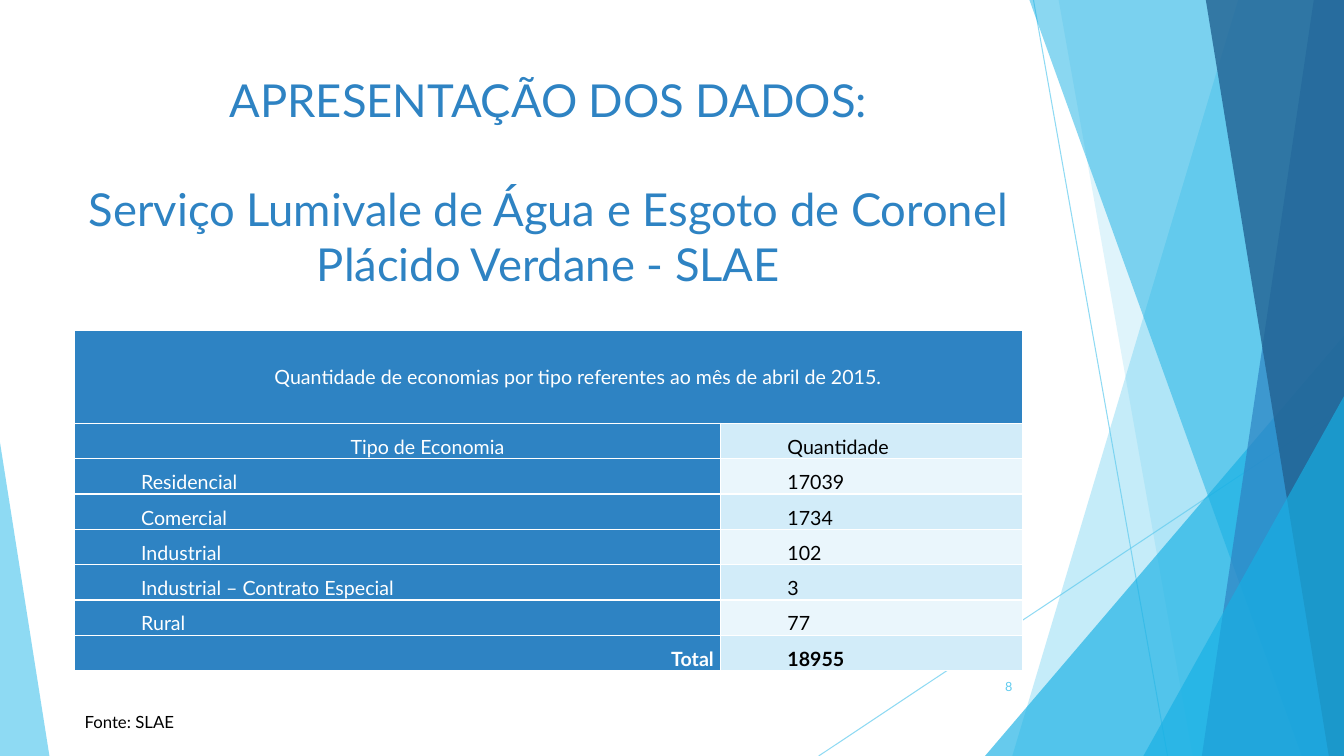
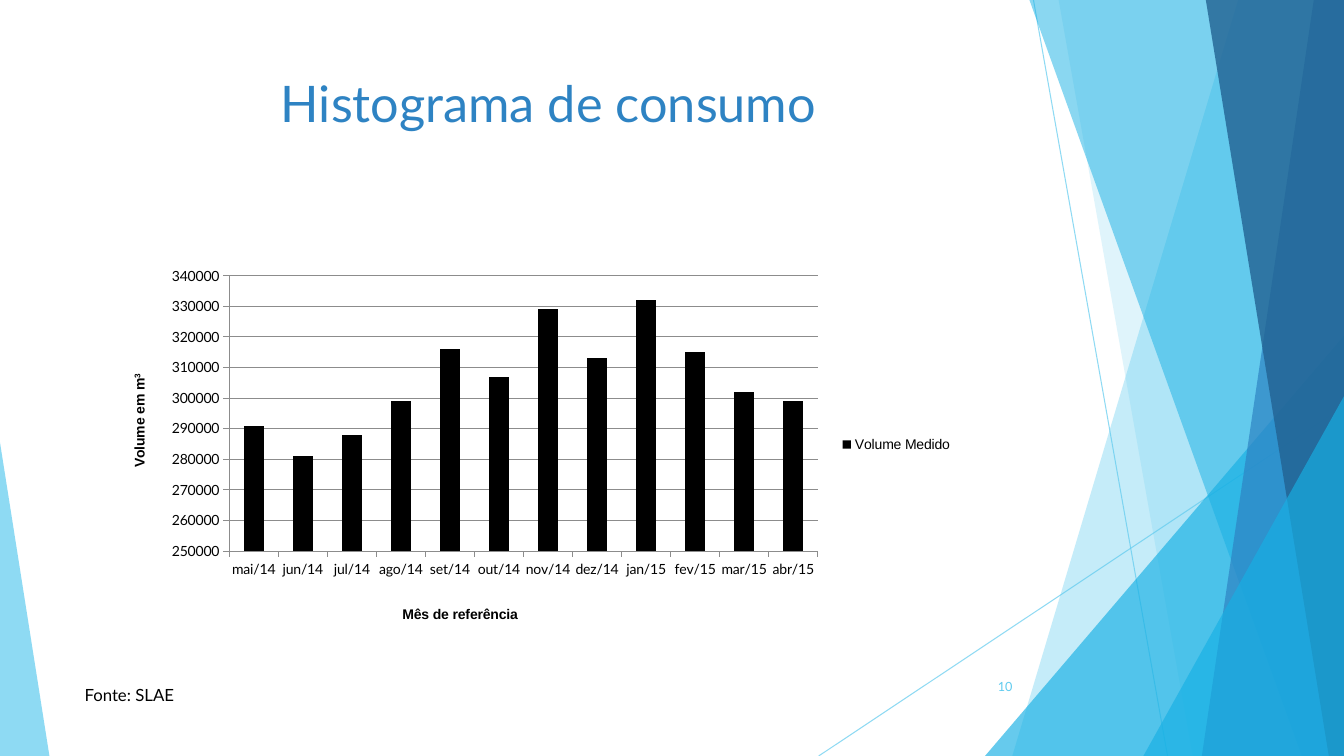
from lxml import etree
from pptx import Presentation
from pptx.chart import data as cd
from pptx.dml.color import RGBColor
from pptx.enum import chart as ch, shapes, text
from pptx.oxml import ns
from pptx.util import Inches, Pt

SKY = RGBColor(0x5F, 0xCB, 0xEF)
CYAN = RGBColor(0x17, 0xB0, 0xE4)
BLUE = RGBColor(0x2E, 0x83, 0xC3)
NAVY = RGBColor(0x22, 0x62, 0x92)
PALE = RGBColor(0xD2, 0xEC, 0xF9)
PALER = RGBColor(0xEA, 0xF6, 0xFC)
GREY = RGBColor(0x8C, 0x8C, 0x8C)
BLACK = RGBColor(0, 0, 0)
WHITE = RGBColor(255, 255, 255)
FONT = "Lato"
W, H = 13.33, 7.5
LEFT, WIDTH = 0.74, 9.4
AL = text.PP_ALIGN

LINES = [(10.25, 0, 11.58, H), (W, 4.03, 8.12, H)]
FACETS = [
    ("band", (12.28, 10.04), SKY, 36),
    ("band", (10.5, 11.83), SKY, 20),
    ("triangle", (9.77, 3.33, 3.56, 1), CYAN, 66),
    ("band", (10.21, 12.91), CYAN, 50),
    ("band", (13.03, 11.92), BLUE, 70),
    ("band", (11.96, 13.18), NAVY, 80),
    ("triangle", (11.34, 3.93, 1.99, 1), CYAN, 66),
    ("triangle", (0, 4.39, 0.49, 0), SKY, 70),
]
ECONOMIES = [
    ("Tipo de Economia", "Quantidade"),
    ("Residencial", "17039"),
    ("Comercial", "1734"),
    ("Industrial", "102"),
    ("Industrial – Contrato Especial", "3"),
    ("Rural", "77"),
    ("Total", "18955"),
]
MONTHS = ["mai/14", "jun/14", "jul/14", "ago/14", "set/14", "out/14",
          "nov/14", "dez/14", "jan/15", "fev/15", "mar/15", "abr/15"]
VOLUMES = [291000, 281000, 288000, 299000, 316000, 307000,
           329000, 313000, 332000, 315000, 302000, 299000]


def set_alpha(sp, percent):
    """Make the colour of a fill or line partly transparent."""
    for clr in sp._element.spPr.iter(ns.qn("a:srgbClr")):
        etree.SubElement(clr, ns.qn("a:alpha")).set("val", str(percent * 1000))


def style_font(font, size, color, name=FONT, bold=False):
    """Set the face, size, colour and weight of a font."""
    font.name, font.size, font.bold = name, Pt(size), bold
    font.color.rgb = color


def add_run(p, words, size, color, **kw):
    """Add one styled run to a paragraph."""
    r = p.add_run()
    r.text = words
    style_font(r.font, size, color, **kw)
    return r


def add_text(s, box, paragraphs, size, color, align=AL.LEFT,
             anchor=text.MSO_ANCHOR.TOP, gap=0):
    """Place a wrapping text box with a gap between its paragraphs."""
    tf = s.shapes.add_textbox(*map(Inches, box)).text_frame
    tf.word_wrap = True
    tf.vertical_anchor = anchor
    for i, words in enumerate(paragraphs):
        p = tf.add_paragraph() if i else tf.paragraphs[0]
        p.alignment = align
        if i:
            p.space_before = Pt(gap)
        add_run(p, words, size, color)


def add_facets(s):
    """Draw the thin lines and translucent facets of the backdrop."""
    for line in LINES:
        cxn = s.shapes.add_connector(shapes.MSO_CONNECTOR.STRAIGHT, *map(Inches, line))
        cxn.line.color.rgb = SKY
        cxn.line.width = Pt(0.75)
        set_alpha(cxn, 70)
        etree.SubElement(cxn._element.spPr, ns.qn("a:effectLst"))
    for kind, geometry, color, alpha in FACETS:
        if kind == "band":
            top, bottom = geometry
            fb = s.shapes.build_freeform(Inches(top), 0)
            fb.add_line_segments([(Inches(x), Inches(y)) for x, y in
                                  ((W, 0), (W, H), (bottom, H))], close=True)
            sp = fb.convert_to_shape()
        else:
            x, y, w, apex = geometry
            sp = s.shapes.add_shape(shapes.MSO_SHAPE.ISOSCELES_TRIANGLE,
                                    *map(Inches, (x, y, w, H - y)))
            sp.adjustments[0] = apex
        sp.shadow.inherit = False
        sp.fill.solid()
        sp.fill.fore_color.rgb = color
        sp.line.fill.background()
        set_alpha(sp, alpha)


def add_base(prs, title, size, number, source_top):
    """Add a slide with backdrop, title, page number and source."""
    s = prs.slides.add_slide(prs.slide_layouts[6])
    add_facets(s)
    add_text(s, (LEFT, 0.67, WIDTH, 1.44), title, size, BLUE, AL.CENTER, gap=size * 1.2)
    add_text(s, (9.39, 6.61, 0.75, 0.4), [number], 9, SKY, AL.RIGHT, text.MSO_ANCHOR.MIDDLE)
    add_text(s, (LEFT, source_top, 3.22, 0.3), ["Fonte: SLAE"], 12, BLACK)
    return s


def fill_cell(cell, words, fill, color, align, spacing=1.5, bold=False):
    """Write a table cell with white borders and an indented first line."""
    cell.margin_left = cell.margin_right = Inches(0.07)
    cell.margin_top = cell.margin_bottom = 0
    tcPr = cell._tc.get_or_add_tcPr()
    for side in ("lnL", "lnR", "lnT", "lnB"):
        ln = etree.SubElement(tcPr, ns.qn("a:" + side), w=str(Pt(1)))
        solid = etree.SubElement(ln, ns.qn("a:solidFill"))
        etree.SubElement(solid, ns.qn("a:srgbClr"), val=str(WHITE))
    cell.fill.solid()
    cell.fill.fore_color.rgb = fill
    p = cell.text_frame.paragraphs[0]
    p.alignment, p.line_spacing = align, spacing
    p._p.get_or_add_pPr().set("indent", str(Inches(0.59)))
    add_run(p, words, 14, color, bold=bold)


def add_economies(s, x, y, w):
    """Place the table of economies by type."""
    heights = [0.92] + [0.35] * len(ECONOMIES)
    tbl = s.shapes.add_table(len(heights), 2, *map(Inches, (x, y, w, sum(heights)))).table
    for row, h in zip(tbl.rows, heights):
        row.height = Inches(h)
    for col, cw in zip(tbl.columns, (6.41, w - 6.41)):
        col.width = Inches(cw)
    head = tbl.cell(0, 0)
    head.merge(tbl.cell(0, 1))
    head.vertical_anchor = text.MSO_ANCHOR.MIDDLE
    fill_cell(head, "Quantidade de economias por tipo referentes ao mês de abril de 2015.",
              BLUE, WHITE, AL.CENTER, spacing=1.0)
    aligns = {"Tipo de Economia": AL.CENTER, "Total": AL.RIGHT}
    for i, (kind, amount) in enumerate(ECONOMIES):
        bold = kind == "Total"
        fill_cell(tbl.cell(i + 1, 0), kind, BLUE, WHITE, aligns.get(kind, AL.LEFT), bold=bold)
        fill_cell(tbl.cell(i + 1, 1), amount, PALER if i % 2 else PALE, BLACK, AL.LEFT, bold=bold)


def set_layout(parent, index, **values):
    """Give a chart part a manual layout in fractions of the chart."""
    for old in parent.findall(ns.qn("c:layout")):
        parent.remove(old)
    layout = etree.Element(ns.qn("c:layout"))
    manual = etree.SubElement(layout, ns.qn("c:manualLayout"))
    for tag, val in values.items():
        etree.SubElement(manual, ns.qn("c:" + tag), val=str(val))
    parent.insert(index, layout)


def style_axis(axis, words, x, y):
    """Style an axis and place its title, with an optional superscript."""
    axis.major_tick_mark = ch.XL_TICK_MARK.OUTSIDE
    axis.minor_tick_mark = ch.XL_TICK_MARK.NONE
    axis.format.line.color.rgb = GREY
    axis.format.line.width = Pt(0.5)
    style_font(axis.tick_labels.font, 10, BLACK)
    p = axis.axis_title.text_frame.paragraphs[0]
    base, _, raised = words.partition("^")
    add_run(p, base, 10, BLACK, name="Arial", bold=True)
    if raised:
        r = add_run(p, raised, 10, BLACK, name="Arial", bold=True)
        r._r.get_or_add_rPr().set("baseline", "30000")
    set_layout(axis.axis_title._element, 1, xMode="edge", yMode="edge", x=x, y=y)


def add_histogram(s, box):
    """Place the column chart of measured volume by month."""
    data = cd.CategoryChartData()
    data.categories = MONTHS
    data.add_series("Volume Medido", VOLUMES)
    chart = s.shapes.add_chart(ch.XL_CHART_TYPE.COLUMN_CLUSTERED,
                               *map(Inches, box), data).chart
    chart.has_title = False
    style_font(chart.font, 10, BLACK)
    chart.has_legend = True
    chart.legend.position = ch.XL_LEGEND_POSITION.RIGHT
    chart.legend.include_in_layout = False
    style_font(chart.legend.font, 10, BLACK, name="Arial")
    plot = chart.plots[0]
    plot.gap_width = 150
    plot.vary_by_categories = False
    fill = plot.series[0].format.fill
    fill.solid()
    fill.fore_color.rgb = BLACK
    style_axis(chart.category_axis, "Mês de referência", 0.34, 0.93)
    va = chart.value_axis
    style_axis(va, "Volume em m^3", 0.02, 0.3)
    va.minimum_scale, va.maximum_scale, va.major_unit = 250000, 340000, 10000
    va.tick_labels.number_format = "General"
    va.tick_labels.number_format_is_linked = False
    va.major_gridlines.format.line.color.rgb = GREY
    va.major_gridlines.format.line.width = Pt(0.5)
    area = chart._chartSpace.find(".//" + ns.qn("c:plotArea"))
    set_layout(area, 0, layoutTarget="inner", xMode="edge", yMode="edge",
               x=0.14, y=0.04, w=0.69, h=0.75)


def main():
    """Build and save the two slides."""
    prs = Presentation()
    prs.slide_width, prs.slide_height = Inches(W), Inches(H)
    s = add_base(prs, ["APRESENTAÇÃO DOS DADOS:",
                       "Serviço Lumivale de Água e Esgoto de Coronel Plácido Verdane - SLAE"],
                 32.4, "8", 7.01)
    add_economies(s, LEFT, 3.28, WIDTH)
    s = add_base(prs, ["Histograma de consumo"], 36, "10", 6.74)
    add_histogram(s, (1.09, 2.59, 8.46, 3.64))
    prs.save("out.pptx")


if __name__ == "__main__":
    main()
